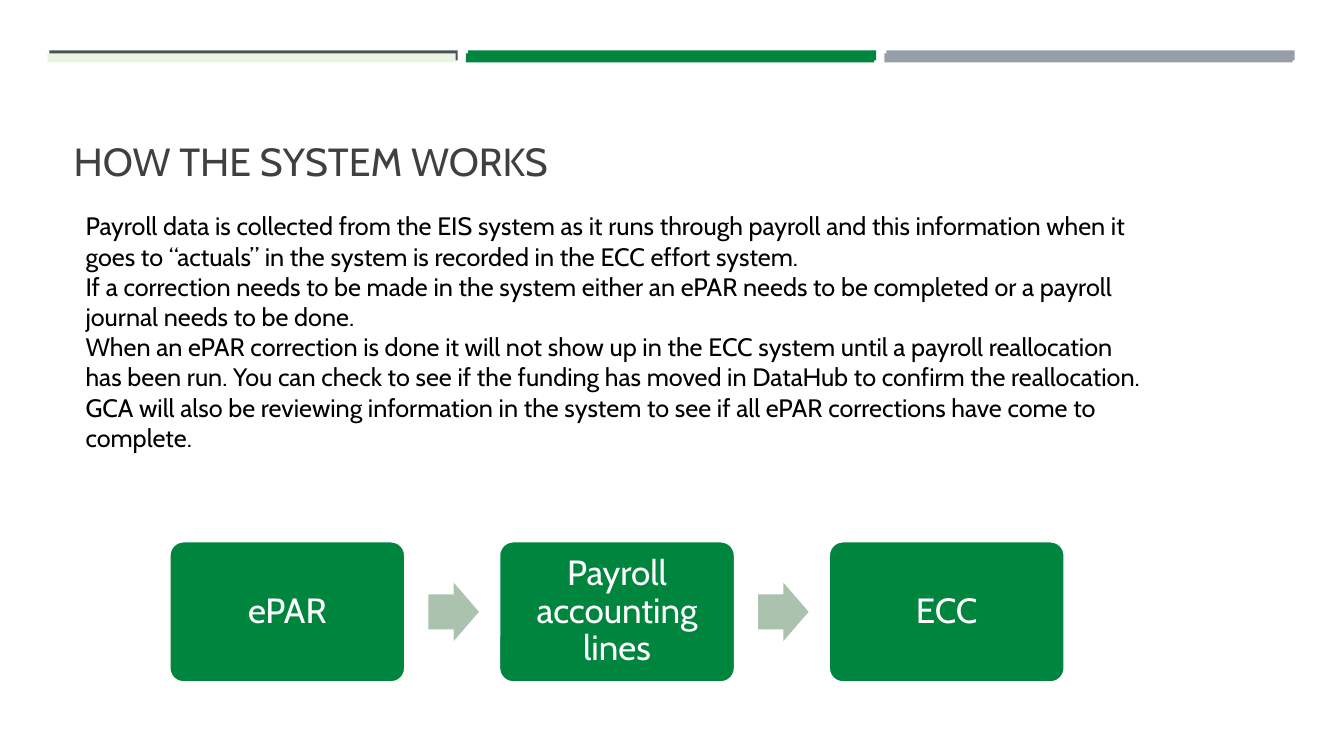
from dataclasses import dataclass

from pptx import Presentation
from pptx.dml.color import RGBColor
from pptx.enum.shapes import MSO_SHAPE
from pptx.enum.text import MSO_ANCHOR, MSO_AUTO_SIZE, PP_ALIGN
from pptx.util import Inches, Pt

RECTANGLE = MSO_SHAPE.RECTANGLE
ROUNDED = MSO_SHAPE.ROUNDED_RECTANGLE
ARROW = MSO_SHAPE.RIGHT_ARROW
BOTTOM, MIDDLE = MSO_ANCHOR.BOTTOM, MSO_ANCHOR.MIDDLE
LEFT, CENTER = PP_ALIGN.LEFT, PP_ALIGN.CENTER
NO_AUTOFIT = MSO_AUTO_SIZE.NONE
TITLE_ONLY = 5


@dataclass(frozen=True)
class Theme:
    font: str = "Cabin"
    title_size: float = 28
    body_size: float = 18
    step_size: float = 25
    title: str = "404040"
    body: str = "000000"
    white: str = "FFFFFF"
    green: str = "00853E"
    slate: str = "465359"
    gray: str = "969FA7"
    pale: str = "EDF3E4"
    arrow: str = "ABC2AF"


theme = Theme()
presentation = Presentation()
presentation.slide_width = Inches(13.33)
presentation.slide_height = Inches(7.5)
slide = presentation.slides.add_slide(presentation.slide_layouts[TITLE_ONLY])


def add_filled_shape(kind, left, top, width, height, color):
    shape = slide.shapes.add_shape(
        kind, Inches(left), Inches(top), Inches(width), Inches(height))
    shape.shadow.inherit = False
    shape.fill.solid()
    shape.fill.fore_color.rgb = RGBColor.from_string(color)
    shape.line.fill.background()
    return shape


def write_run(paragraph, text, size, color, alignment):
    paragraph.alignment = alignment
    run = paragraph.add_run()
    run.text = text
    run.font.name = theme.font
    run.font.size = Pt(size)
    run.font.color.rgb = RGBColor.from_string(color)


# Header stripes: two rows of three, the second row overlapping the first
BAR_PITCH, BAR_WIDTH = 4.15, 4.05
stripe_rows = [
    (0.49, 0.5, 0.1, (theme.slate, theme.green, theme.gray)),
    (0.47, 0.53, 0.09, (theme.pale, theme.green, theme.gray)),
]
for row_left, row_top, row_height, colors in stripe_rows:
    for column, color in enumerate(colors):
        add_filled_shape(RECTANGLE, row_left + column * BAR_PITCH, row_top,
                         BAR_WIDTH, row_height, color)

# Title
title = slide.shapes.title
title.left, title.top = Inches(0.63), Inches(0.8)
title.width, title.height = Inches(12.06), Inches(1.08)
title.text_frame.auto_size = NO_AUTOFIT
title.text_frame.vertical_anchor = BOTTOM
write_run(title.text_frame.paragraphs[0], "HOW THE SYSTEM WORKS",
          theme.title_size, theme.title, LEFT)

# Explanation
explanation = [
    "Payroll data is collected from the EIS system as it runs through payroll "
    "and this information when it goes to “actuals” in the system is recorded "
    "in the ECC effort system.",
    "If a correction needs to be made in the system either an ePAR needs to be "
    "completed or a payroll journal needs to be done.",
    "When an ePAR correction is done it will not show up in the ECC system "
    "until a payroll reallocation has been run. You can check to see if the "
    "funding has moved in DataHub to confirm the reallocation.",
    "GCA will also be reviewing information in the system to see if all ePAR "
    "corrections have come to complete.",
]
text_box = slide.shapes.add_textbox(
    Inches(0.75), Inches(2.04), Inches(10.75), Inches(4.04))
frame = text_box.text_frame
frame.word_wrap = True
for index, text in enumerate(explanation):
    paragraph = frame.add_paragraph() if index else frame.paragraphs[0]
    write_run(paragraph, text, theme.body_size, theme.body, LEFT)

# Process flow: equal steps with an arrow in each gap
STEP_LEFT, STEP_TOP, STEP_PITCH = 1.68, 5.37, 3.27
STEP_WIDTH, STEP_HEIGHT, STEP_INSET = 2.34, 1.4, 0.14
ARROW_OFFSET, ARROW_WIDTH, ARROW_HEIGHT = 2.57, 0.5, 0.58
steps = ["ePAR", "Payroll accounting lines", "ECC"]
for index, label in enumerate(steps):
    left = STEP_LEFT + index * STEP_PITCH
    step = add_filled_shape(ROUNDED, left, STEP_TOP, STEP_WIDTH, STEP_HEIGHT,
                            theme.green)
    step.adjustments[0] = 0.1
    step.line.color.rgb = RGBColor.from_string(theme.white)
    step.line.width = Pt(1.75)
    frame = step.text_frame
    frame.word_wrap = True
    frame.vertical_anchor = MIDDLE
    frame.margin_left = frame.margin_right = Inches(STEP_INSET)
    frame.margin_top = frame.margin_bottom = Inches(STEP_INSET)
    frame.paragraphs[0].line_spacing = 0.9
    write_run(frame.paragraphs[0], label, theme.step_size, theme.white, CENTER)
    if index < len(steps) - 1:
        arrow = add_filled_shape(
            ARROW, left + ARROW_OFFSET,
            STEP_TOP + (STEP_HEIGHT - ARROW_HEIGHT) / 2,
            ARROW_WIDTH, ARROW_HEIGHT, theme.arrow)
        arrow.adjustments[0] = 0.6
        arrow.adjustments[1] = 0.5

presentation.save("out.pptx")
